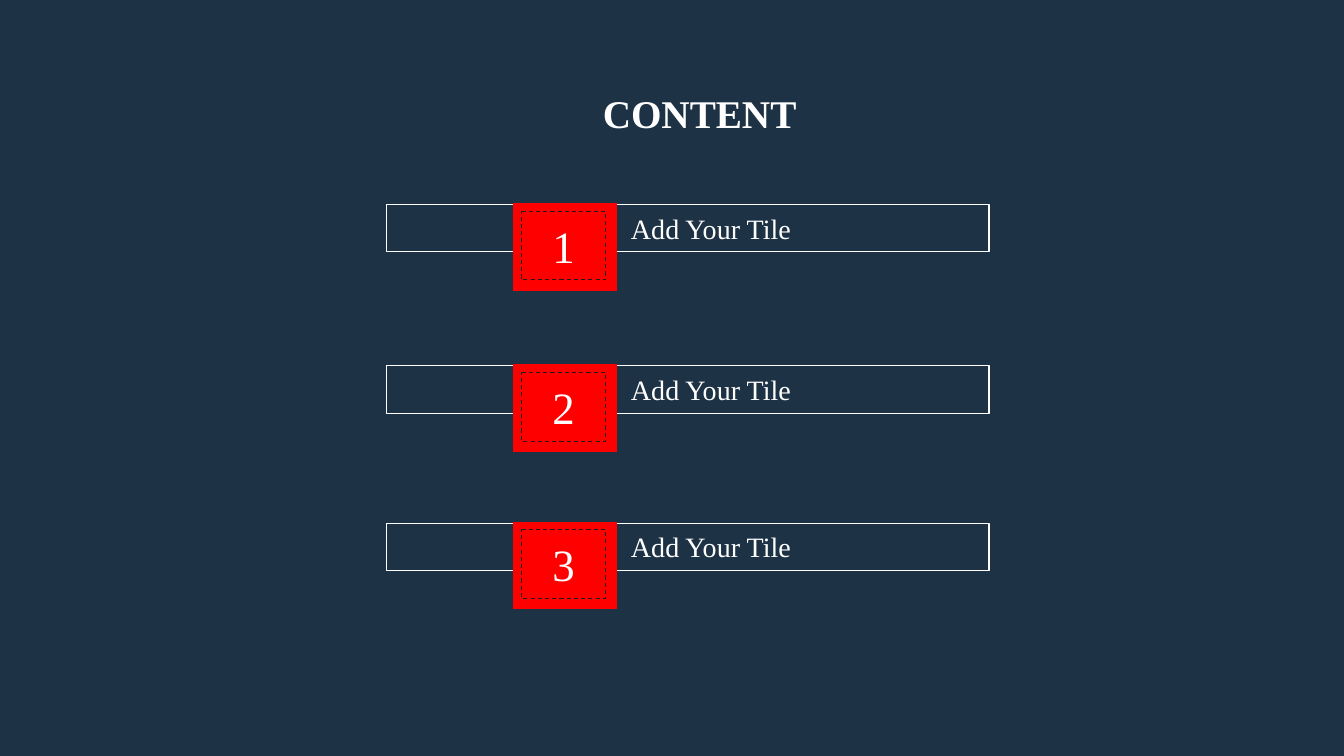
from dataclasses import dataclass

from pptx import Presentation
from pptx.dml.color import RGBColor
from pptx.enum.dml import MSO_LINE
from pptx.enum.shapes import MSO_SHAPE
from pptx.enum.text import MSO_ANCHOR, MSO_AUTO_SIZE, PP_ALIGN
from pptx.shapes.autoshape import Shape
from pptx.util import Inches, Pt

RECTANGLE = MSO_SHAPE.RECTANGLE
PROCESS = MSO_SHAPE.FLOWCHART_PROCESS
DASH = MSO_LINE.DASH
MIDDLE = MSO_ANCHOR.MIDDLE
TOP = MSO_ANCHOR.TOP
LEFT = PP_ALIGN.LEFT
CENTER = PP_ALIGN.CENTER
FIT_SHAPE = MSO_AUTO_SIZE.SHAPE_TO_FIT_TEXT
FONT = "Times New Roman"
COLORS = {
    "background": "1D3245",
    "badge": "FF0000",
    "dash": "1C1C1C",
    "text": "FFFFFF",
    "frame": "FFFFFF",
}
SLIDE_WIDTH = Inches(13.33)
SLIDE_HEIGHT = Inches(7.5)


@dataclass(frozen=True)
class Box:
    left: float
    top: float
    width: float
    height: float

    def lowered(self, distance: float) -> "Box":
        return Box(self.left, self.top + distance, self.width, self.height)

    def lengths(self) -> tuple[int, int, int, int]:
        return (
            int(SLIDE_WIDTH * self.left / 100),
            int(SLIDE_HEIGHT * self.top / 100),
            int(SLIDE_WIDTH * self.width / 100),
            int(SLIDE_HEIGHT * self.height / 100),
        )


@dataclass(frozen=True)
class Entry:
    number: str
    title: str
    top: float


ENTRIES = [
    Entry("1", "Add Your Tile", 27.07),
    Entry("2", "Add Your Tile", 48.4),
    Entry("3", "Add Your Tile", 69.2),
]
HEADING = Box(44.11, 11.2, 16.5, 7.6)
FRAME = Box(28.73, 0, 44.86, 6.27)
BADGE = Box(38.18, -0.2, 7.7, 11.6)
BADGE_INSET = Box(38.8, 0.87, 6.27, 9.07)
ENTRY_TITLE = Box(46.21, 0.2, 15, 5.73)


def color(name: str) -> RGBColor:
    return RGBColor.from_string(COLORS[name])


def add_rectangle(shapes, kind, box: Box, fill: str = "", line: str = "", dash=None) -> Shape:
    shape = shapes.add_shape(kind, *box.lengths())
    shape.shadow.inherit = False
    if fill:
        shape.fill.solid()
        shape.fill.fore_color.rgb = color(fill)
    else:
        shape.fill.background()
    if line:
        shape.line.color.rgb = color(line)
        shape.line.width = Pt(0.75)
        shape.line.dash_style = dash
    else:
        shape.line.fill.background()
    return shape


def write_text(shape, text: str, size: int, bold: bool = False,
               alignment=LEFT, anchor=TOP, wrap: bool = True) -> None:
    frame = shape.text_frame
    frame.word_wrap = wrap
    frame.vertical_anchor = anchor
    paragraph = frame.paragraphs[0]
    paragraph.alignment = alignment
    run = paragraph.add_run()
    run.text = text
    run.font.name = FONT
    run.font.size = Pt(size)
    run.font.bold = bold
    run.font.color.rgb = color("text")


def add_label(shapes, box: Box, text: str, size: int, bold: bool = False) -> None:
    label = shapes.add_textbox(*box.lengths())
    write_text(label, text, size, bold=bold)
    label.text_frame.auto_size = FIT_SHAPE


def add_entry(slide, entry: Entry) -> None:
    add_rectangle(slide.shapes, RECTANGLE, FRAME.lowered(entry.top), line="frame")
    badge = slide.shapes.add_group_shape()
    add_rectangle(badge.shapes, PROCESS, BADGE.lowered(entry.top), fill="badge")
    inset = add_rectangle(badge.shapes, PROCESS, BADGE_INSET.lowered(entry.top),
                          line="dash", dash=DASH)
    write_text(inset, entry.number, 32, alignment=CENTER, anchor=MIDDLE, wrap=False)
    add_label(slide.shapes, ENTRY_TITLE.lowered(entry.top), entry.title, 20)


def main() -> None:
    presentation = Presentation()
    presentation.slide_width = SLIDE_WIDTH
    presentation.slide_height = SLIDE_HEIGHT
    slide = presentation.slides.add_slide(presentation.slide_layouts[6])
    slide.background.fill.solid()
    slide.background.fill.fore_color.rgb = color("background")
    for entry in ENTRIES:
        add_entry(slide, entry)
    add_label(slide.shapes, HEADING, "CONTENT", 28, bold=True)
    presentation.save("out.pptx")


if __name__ == "__main__":
    main()
